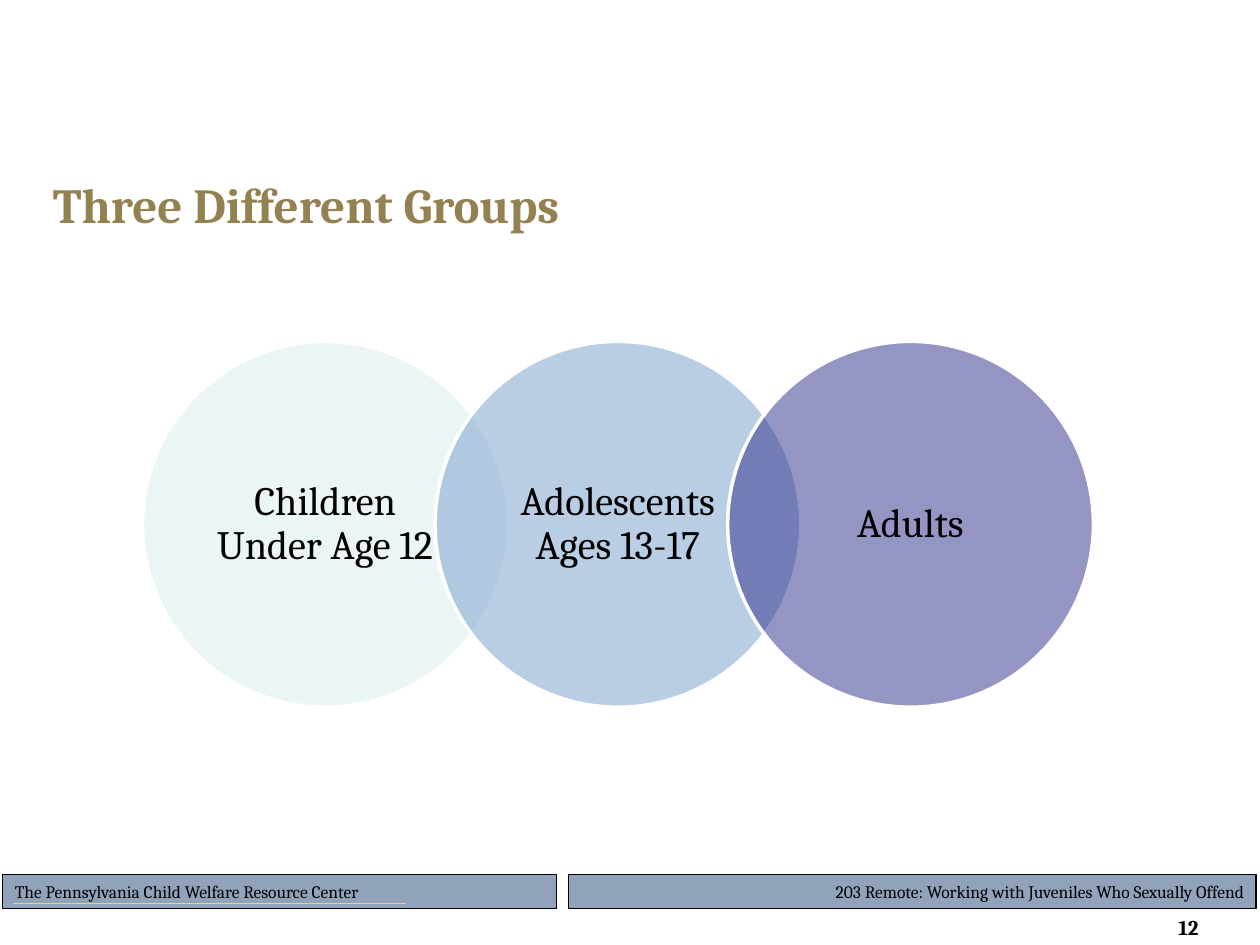
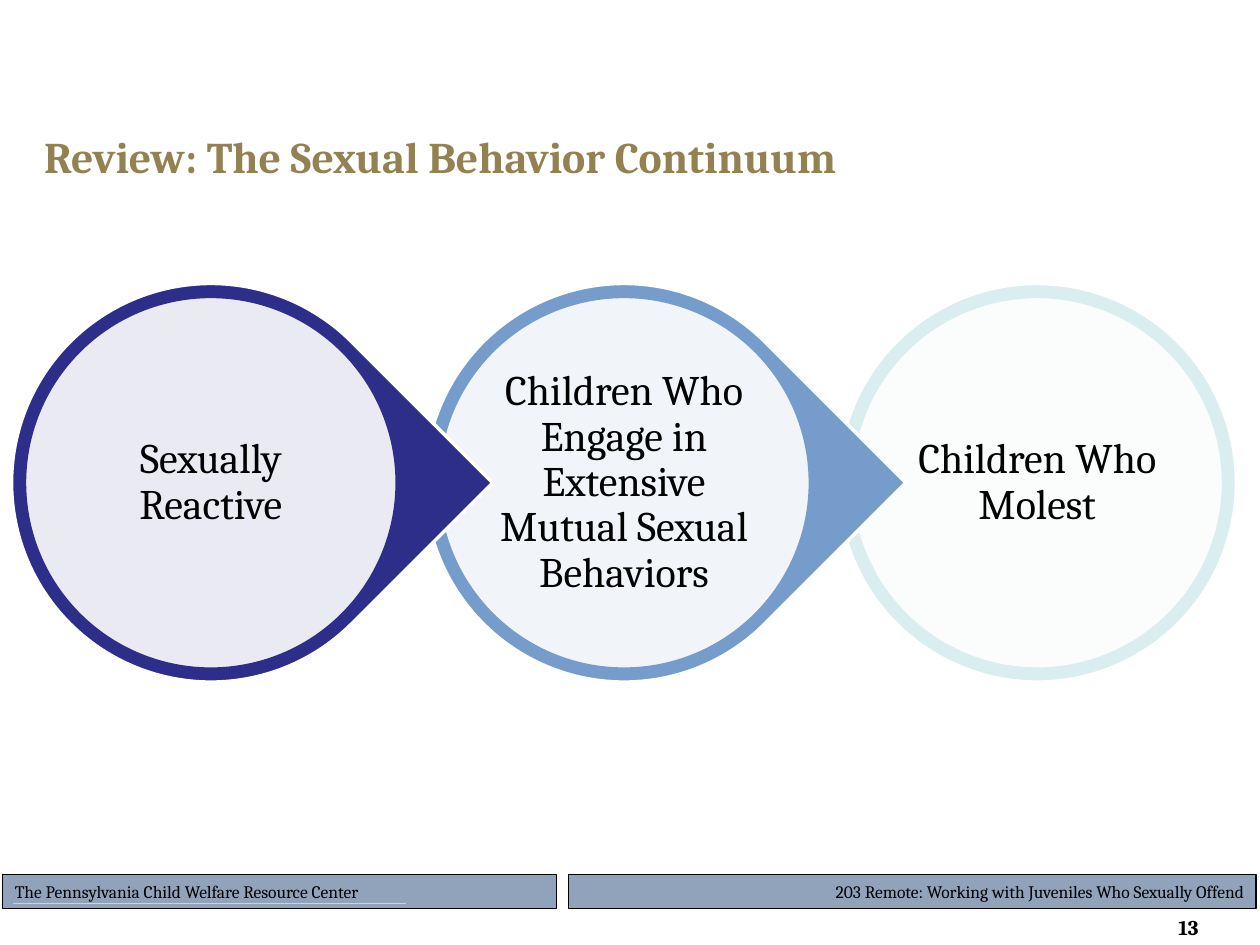
from dataclasses import dataclass
from math import sqrt

from lxml.etree import SubElement
from pptx import Presentation
from pptx.dml.color import RGBColor
from pptx.enum.shapes import MSO_CONNECTOR, MSO_SHAPE
from pptx.enum.text import MSO_ANCHOR, MSO_AUTO_SIZE, PP_ALIGN
from pptx.oxml.ns import qn
from pptx.util import Pt

FONT = "Cambria"
COLORS = {
    "black": "000000",
    "white": "FFFFFF",
    "title": "948151",
    "band": "91A3BB",
    "rule": "E5D199",
    "mint": "DAEDEF",
    "blue": "759CCB",
    "navy": "2D2D8A",
}


@dataclass
class Box:
    left: float
    top: float
    width: float
    height: float

    def pts(self) -> tuple:
        return Pt(self.left), Pt(self.top), Pt(self.width), Pt(self.height)

    def inset(self, gap: float) -> "Box":
        return Box(self.left + gap, self.top + gap,
                   self.width - 2 * gap, self.height - 2 * gap)

    def core(self) -> "Box":
        return self.inset(self.width * (1 - 1 / sqrt(2)) / 2)


@dataclass
class Band:
    box: Box
    text: str
    align: PP_ALIGN
    line: float


@dataclass
class Group:
    text: str
    color: str


BANDS = [
    Band(Box(324.7, 499.7, 393.1, 19.4),
         "203 Remote: Working with Juveniles Who Sexually Offend", PP_ALIGN.RIGHT, 0.75),
    Band(Box(1.4, 499.7, 316.8, 19.4),
         "The Pennsylvania Child Welfare Resource Center", PP_ALIGN.LEFT, 0.5),
]
AGES = [
    Group("Children Under Age 12", "mint"),
    Group("Adolescents Ages 13-17", "blue"),
    Group("Adults", "navy"),
]
STAGES = [
    Group("Sexually Reactive", "navy"),
    Group("Children Who Engage in Extensive Mutual Sexual Behaviors", "blue"),
    Group("Children Who Molest", "mint"),
]


def shade(name: str) -> RGBColor:
    return RGBColor.from_string(COLORS[name])


def write(frame, text: str, size: float, color: str = "black",
          bold: bool = False, align: PP_ALIGN = PP_ALIGN.LEFT) -> None:
    frame.word_wrap = True
    frame.auto_size = MSO_AUTO_SIZE.NONE
    frame.text = text
    para = frame.paragraphs[0]
    para.alignment = align
    font = para.font
    font.name, font.size, font.bold = FONT, Pt(size), bold
    font.color.rgb = shade(color)


def draw(slide, kind: MSO_SHAPE, box: Box, fill: str, line: str,
         width: float, alpha: int = 100):
    shape = slide.shapes.add_shape(kind, *box.pts())
    shape.shadow.inherit = False
    shape.fill.solid()
    shape.fill.fore_color.rgb = shade(fill)
    if alpha < 100:
        tint = shape.fill._xPr.find(qn("a:solidFill"))[0]
        SubElement(tint, qn("a:alpha"), val=str(alpha * 1000))
    shape.line.color.rgb = shade(line)
    shape.line.width = Pt(width)
    return shape


def label(slide, box: Box, text: str, size: float, side: float) -> None:
    frame = slide.shapes.add_textbox(*box.pts()).text_frame
    write(frame, text, size, align=PP_ALIGN.CENTER)
    frame.vertical_anchor = MSO_ANCHOR.MIDDLE
    frame.margin_left = frame.margin_right = Pt(side)
    frame.margin_top = frame.margin_bottom = Pt(2.2)
    frame.paragraphs[0].line_spacing = 0.9


def footer(slide, page: int) -> None:
    for band in BANDS:
        shape = draw(slide, MSO_SHAPE.RECTANGLE, band.box, "band", "black", band.line)
        write(shape.text_frame, band.text, 10, align=band.align)
    rule = slide.shapes.add_connector(
        MSO_CONNECTOR.STRAIGHT, Pt(7.2), Pt(516.2), Pt(231.8), Pt(516.2))
    rule.line.color.rgb = shade("rule")
    rule.line.width = Pt(0.75)
    SubElement(rule._element.spPr, qn("a:effectLst"))
    frame = slide.shapes.add_textbox(*Box(634.3, 519.1, 68.4, 21.6).pts()).text_frame
    write(frame, str(page), 12, bold=True, align=PP_ALIGN.RIGHT)
    frame.margin_right = Pt(17.8)


def start(deck, page: int, title: str, box: Box, size: float):
    slide = deck.slides.add_slide(deck.slide_layouts[5])
    footer(slide, page)
    head = slide.shapes.title
    head.left, head.top, head.width, head.height = box.pts()
    write(head.text_frame, title, size, "title", True)
    head.text_frame.vertical_anchor = MSO_ANCHOR.MIDDLE
    return slide


def venn(slide) -> None:
    size = 209
    for i, group in enumerate(AGES):
        box = Box(81.4 + 0.8 * size * i, 195.1, size, size)
        draw(slide, MSO_SHAPE.OVAL, box, group.color, "white", 2, 50)
        label(slide, box.core(), group.text, 23, 11.5)


def chain(slide) -> None:
    size, step = 227.8, 236.1
    last = len(STAGES) - 1
    for i, group in reversed(list(enumerate(STAGES))):
        box = Box(6.6 + step * i, 162, size, size)
        kind = MSO_SHAPE.OVAL if i == last else MSO_SHAPE.TEAR
        drop = draw(slide, kind, box, group.color, "white", 2)
        if i < last:
            drop.rotation = 45
            drop.adjustments[0] = 1
        ring = box.inset(7.4)
        draw(slide, MSO_SHAPE.OVAL, ring, "white", group.color, 2, 90)
        label(slide, ring.core(), group.text, 24, 2.2)


def main() -> None:
    deck = Presentation()
    deck.slide_width, deck.slide_height = Pt(720), Pt(540)
    venn(start(deck, 12, "Three Different Groups", Box(23, 88.6, 521.3, 55.4), 28))
    chain(start(deck, 13, "Review: The Sexual Behavior Continuum",
                Box(18, 61.2, 660.2, 55.4), 25))
    deck.save("out.pptx")


if __name__ == "__main__":
    main()
